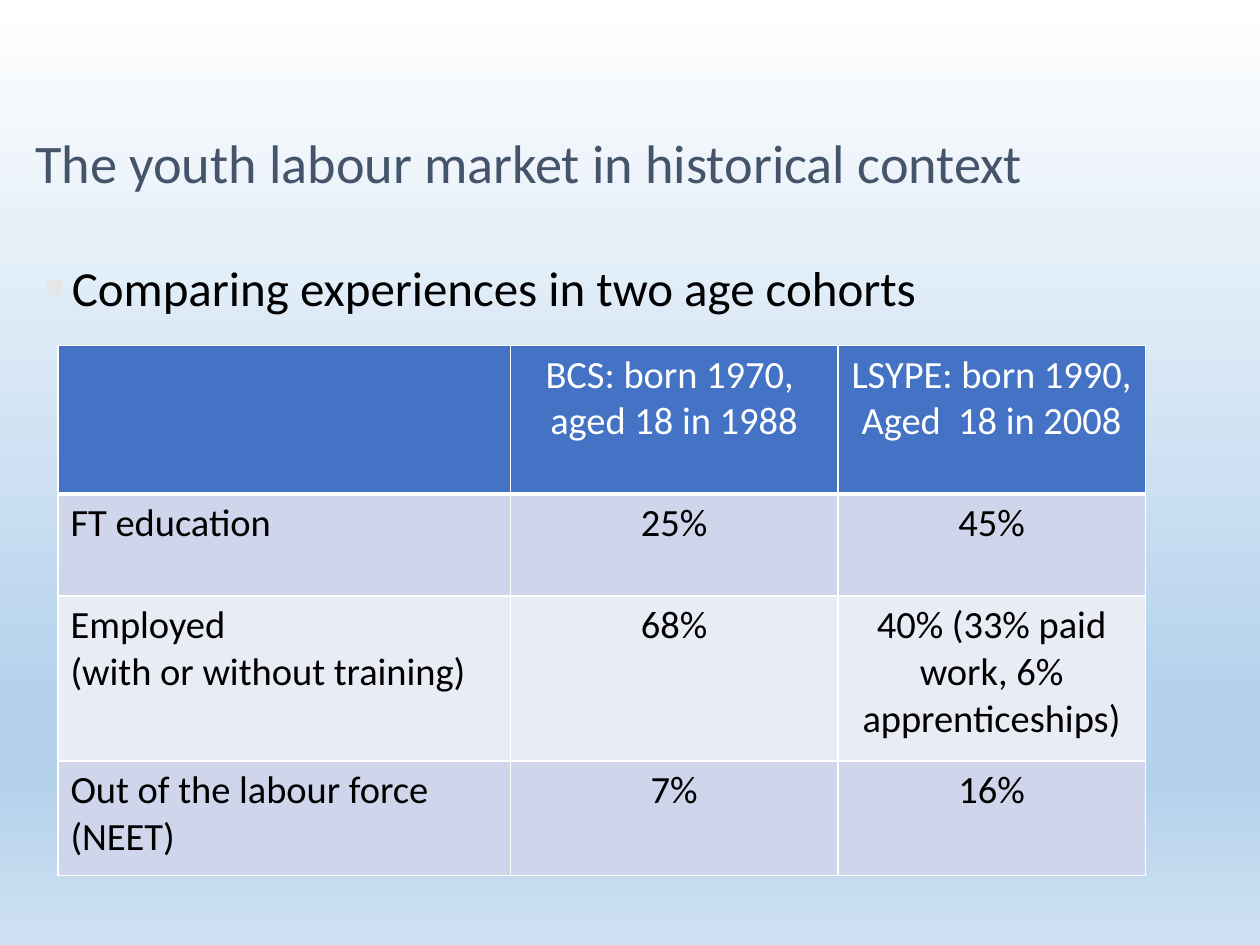
from lxml.etree import SubElement
from pptx import Presentation
from pptx.dml.color import RGBColor
from pptx.enum.text import MSO_ANCHOR as Anchor, MSO_AUTO_SIZE as AutoSize, PP_ALIGN as Align
from pptx.oxml.ns import qn
from pptx.util import Inches, Pt

FONT = "Calibri"
WHITE = RGBColor(0xFF, 0xFF, 0xFF)
BLACK = RGBColor(0x00, 0x00, 0x00)
SLATE = RGBColor(0x44, 0x54, 0x6A)
BULLET_GREY = RGBColor(0xE7, 0xE6, 0xE6)
HEADER_BLUE = RGBColor(0x44, 0x72, 0xC4)
BAND_DARK = RGBColor(0xCF, 0xD5, 0xEA)
BAND_LIGHT = RGBColor(0xE9, 0xEB, 0xF5)
SKY = RGBColor(0xB5, 0xD2, 0xEC)
PALE_SKY = RGBColor(0xCE, 0xE1, 0xF2)

BACKGROUND_STOPS = [(0, WHITE), (74, SKY), (83, SKY), (100, PALE_SKY)]
COLUMN_WIDTHS = [3.59, 2.6, 2.44]
ROW_HEIGHTS = [1.18, 0.81, 1.31, 0.91]
ROWS = [
    ["", "BCS: born 1970, \naged 18 in 1988", "LSYPE: born 1990, \nAged  18 in 2008"],
    ["FT education", "25%", "45%"],
    ["Employed\n(with or without training)", "68%", "40% (33% paid work, 6% apprenticeships)"],
    ["Out of the labour force (NEET)", "7%", "16%"],
]


def set_values(target, values):
    for name, value in values.items():
        setattr(target, name, value)


def add_child(parent, tag, **attributes):
    return SubElement(parent, qn(tag), attributes)


def style_font(font, size, color):
    set_values(font, {"name": FONT, "size": Pt(size), "bold": False})
    font.color.rgb = color


def place_placeholder(shape, box, anchor):
    for name, value in zip(("left", "top", "width", "height"), box):
        setattr(shape, name, Inches(value))
    margins = dict.fromkeys(("margin_left", "margin_top", "margin_right", "margin_bottom"), 0)
    set_values(shape.text_frame, {
        **margins, "word_wrap": True, "auto_size": AutoSize.NONE, "vertical_anchor": anchor,
    })
    return shape.text_frame.paragraphs[0]


def paint_background(page):
    fill = page.background.fill
    fill.gradient()
    fill.gradient_angle = 270
    stops = page.background._cSld.find(".//" + qn("a:gsLst"))
    for stop in list(stops):
        stops.remove(stop)
    for position, color in BACKGROUND_STOPS:
        stop = add_child(stops, "a:gs", pos=str(position * 1000))
        add_child(stop, "a:srgbClr", val=str(color))


def write_title(page, box):
    para = place_placeholder(page.shapes.title, box, Anchor.BOTTOM)
    set_values(para, {"alignment": Align.LEFT, "line_spacing": Pt(33.3)})
    span = para.add_run()
    span.text = "The youth labour market in historical context"
    style_font(span.font, 31, SLATE)


def write_body(page, box):
    para = place_placeholder(page.placeholders[1], box, Anchor.TOP)
    para.space_before = Pt(10.5)
    span = para.add_run()
    span.text = "Comparing experiences in two age cohorts"
    style_font(span.font, 28, BLACK)
    properties = para._p.get_or_add_pPr()
    indent = Inches(0.22)
    properties.set("marL", str(indent))
    properties.set("indent", str(-indent))
    add_child(add_child(properties, "a:buClr"), "a:srgbClr", val=str(BULLET_GREY))
    add_child(properties, "a:buSzPct", val="120000")
    add_child(properties, "a:buFont", typeface=FONT)
    add_child(properties, "a:buChar", char="▪")


def outline_cell(cell, bottom_width):
    properties = cell._tc.get_or_add_tcPr()
    for side, width in {"L": 1, "R": 1, "T": 1, "B": bottom_width}.items():
        line = add_child(properties, f"a:ln{side}", w=str(Pt(width)))
        add_child(add_child(line, "a:solidFill"), "a:srgbClr", val=str(WHITE))


def fill_cell(cell, text, row, column):
    is_header = row == 0
    outline_cell(cell, 3 if is_header else 1)
    cell.fill.solid()
    cell.fill.fore_color.rgb = HEADER_BLUE if is_header else (BAND_LIGHT, BAND_DARK)[row % 2]
    cell.text = text
    for para in cell.text_frame.paragraphs:
        para.alignment = Align.CENTER if column else Align.LEFT
        style_font(para.font, 22, WHITE if is_header else BLACK)
        for span in para.runs:
            style_font(span.font, 22, WHITE if is_header else BLACK)


def add_cohort_table(page, box):
    frame = page.shapes.add_table(len(ROWS), len(COLUMN_WIDTHS), *map(Inches, box))
    table = frame.table
    for column, width in zip(table.columns, COLUMN_WIDTHS):
        column.width = Inches(width)
    for row, height in zip(table.rows, ROW_HEIGHTS):
        row.height = Inches(height)
    for row, texts in enumerate(ROWS):
        for column, text in enumerate(texts):
            fill_cell(table.cell(row, column), text, row, column)


def main():
    deck = Presentation()
    set_values(deck, {"slide_width": Inches(10), "slide_height": Inches(7.5)})
    page = deck.slides.add_slide(deck.slide_layouts[1])
    paint_background(page)
    write_title(page, (0.28, 0.29, 9.42, 1.25))
    write_body(page, (0.35, 2.04, 9.38, 4.43))
    add_cohort_table(page, (0.46, 2.74, sum(COLUMN_WIDTHS), sum(ROW_HEIGHTS)))
    deck.save("out.pptx")


if __name__ == "__main__":
    main()
